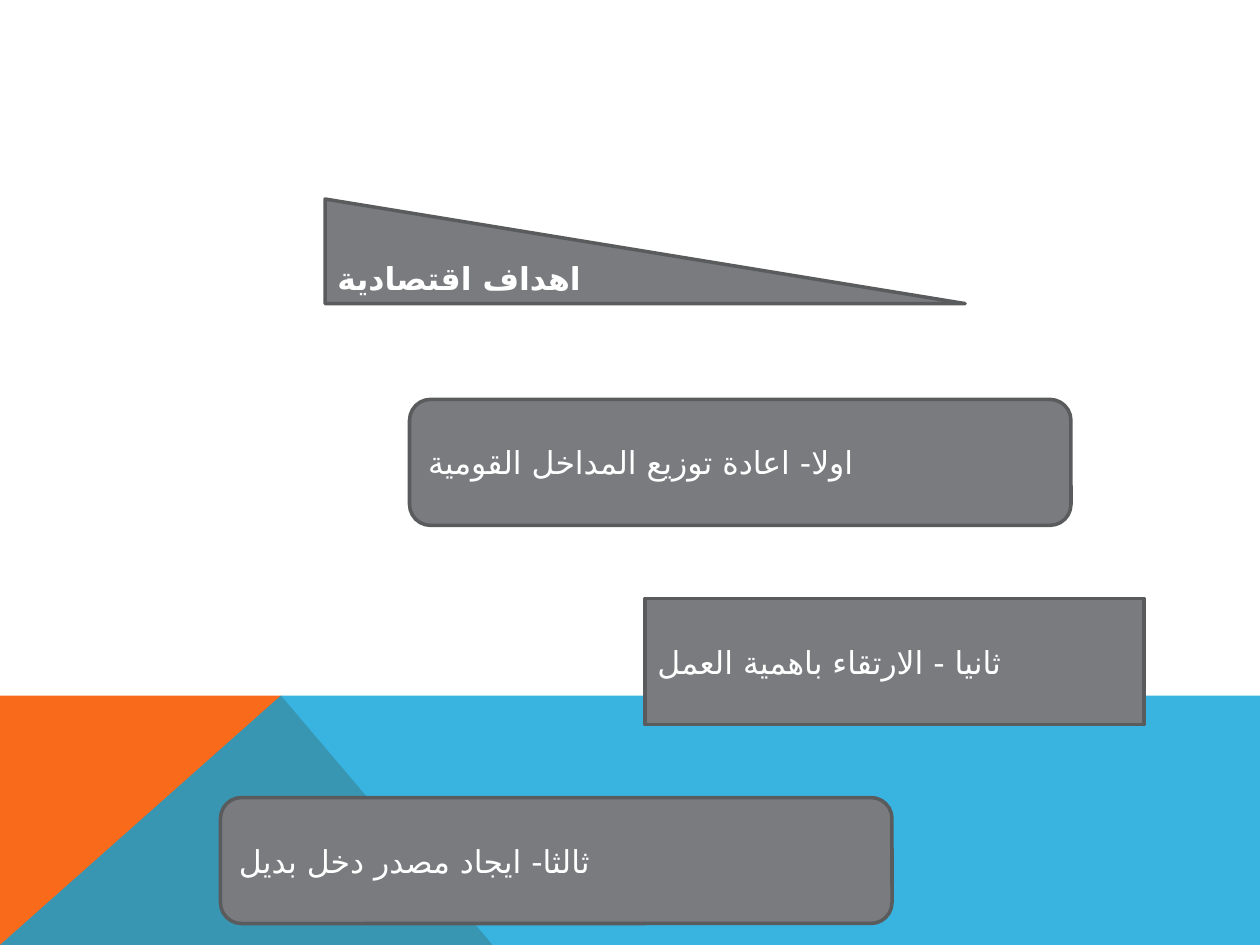
from lxml.etree import SubElement
from pptx import Presentation
from pptx.dml.color import RGBColor
from pptx.enum.shapes import MSO_SHAPE
from pptx.enum.text import MSO_ANCHOR, PP_ALIGN
from pptx.oxml.ns import qn
from pptx.util import Inches, Pt

COLORS = {
    "orange": "F96A1B",
    "blue": "08A1D9",
    "box": "797B7E",
    "outline": "5A5B5D",
    "text": "FFFFFF",
}
FONT = "Cabin"
ARABIC_FONT = "DejaVu Sans"

GOALS = [
    (MSO_SHAPE.ROUNDED_RECTANGLE, 3.25, 3.17, 5.25, "اولا- اعادة توزيع المداخل القومية"),
    (MSO_SHAPE.RECTANGLE, 5.12, 4.75, 3.96, "ثانيا - الارتقاء باهمية العمل"),
    (MSO_SHAPE.ROUNDED_RECTANGLE, 1.75, 6.33, 5.33, "ثالثا- ايجاد مصدر دخل بديل"),
]


def rgb(name):
    """Return the named palette colour."""
    return RGBColor.from_string(COLORS[name])


def add_polygon(slide, points, color, opacity=100):
    """Draw a closed, unlined polygon through points given in inches."""
    corners = [(Inches(x), Inches(y)) for x, y in points]
    builder = slide.shapes.build_freeform(*corners[0])
    builder.add_line_segments(corners[1:], close=True)
    polygon = builder.convert_to_shape()
    polygon.shadow.inherit = False
    polygon.fill.solid()
    polygon.fill.fore_color.rgb = rgb(color)
    polygon.line.fill.background()
    if opacity < 100:
        fill_color = polygon.fill._xPr.find(qn("a:solidFill"))[0]
        SubElement(fill_color, qn("a:alpha"), val=str(opacity * 1000))


def add_footer_band(slide, left, top, width, height):
    """Draw the overlapping orange and blue shapes at the foot of the slide."""
    right, bottom = left + width, top + height
    peak = (left + 2.23, top)
    add_polygon(slide, [(left, bottom), (left, top), peak, (left + 3.91, bottom)], "orange")
    add_polygon(slide, [(left, bottom), peak, (right, top), (right, bottom)], "blue", 80)


def add_label(slide, kind, left, top, width, height, text, bold=False):
    """Add a grey outlined shape holding one right-to-left line and return it."""
    label = slide.shapes.add_shape(
        kind, Inches(left), Inches(top), Inches(width), Inches(height)
    )
    label.shadow.inherit = False
    label.fill.solid()
    label.fill.fore_color.rgb = rgb("box")
    label.line.color.rgb = rgb("outline")
    label.line.width = Pt(2)
    frame = label.text_frame
    frame.word_wrap = True
    frame.vertical_anchor = MSO_ANCHOR.MIDDLE
    paragraph = frame.paragraphs[0]
    paragraph.alignment = PP_ALIGN.LEFT
    paragraph._p.get_or_add_pPr().set("rtl", "1")
    run = paragraph.add_run()
    run.text = text
    run.font.name = FONT
    run.font.size = Pt(18)
    run.font.bold = bold
    run.font.color.rgb = rgb("text")
    SubElement(run._r.get_or_add_rPr(), qn("a:cs"), typeface=ARABIC_FONT)
    return label


def main():
    """Build the economic goals slide and save it."""
    prs = Presentation()
    prs.slide_width, prs.slide_height = Inches(10), Inches(7.5)
    slide = prs.slides.add_slide(prs.slide_layouts[6])
    add_footer_band(slide, 0, 5.52, 10, 1.98)
    heading = add_label(
        slide, MSO_SHAPE.ISOSCELES_TRIANGLE, 2.58, 1.58, 5.08, 0.83, "اهداف اقتصادية", bold=True
    )
    heading.adjustments[0] = 0
    for kind, left, top, width, text in GOALS:
        add_label(slide, kind, left, top, width, 1, text)
    prs.save("out.pptx")


if __name__ == "__main__":
    main()
